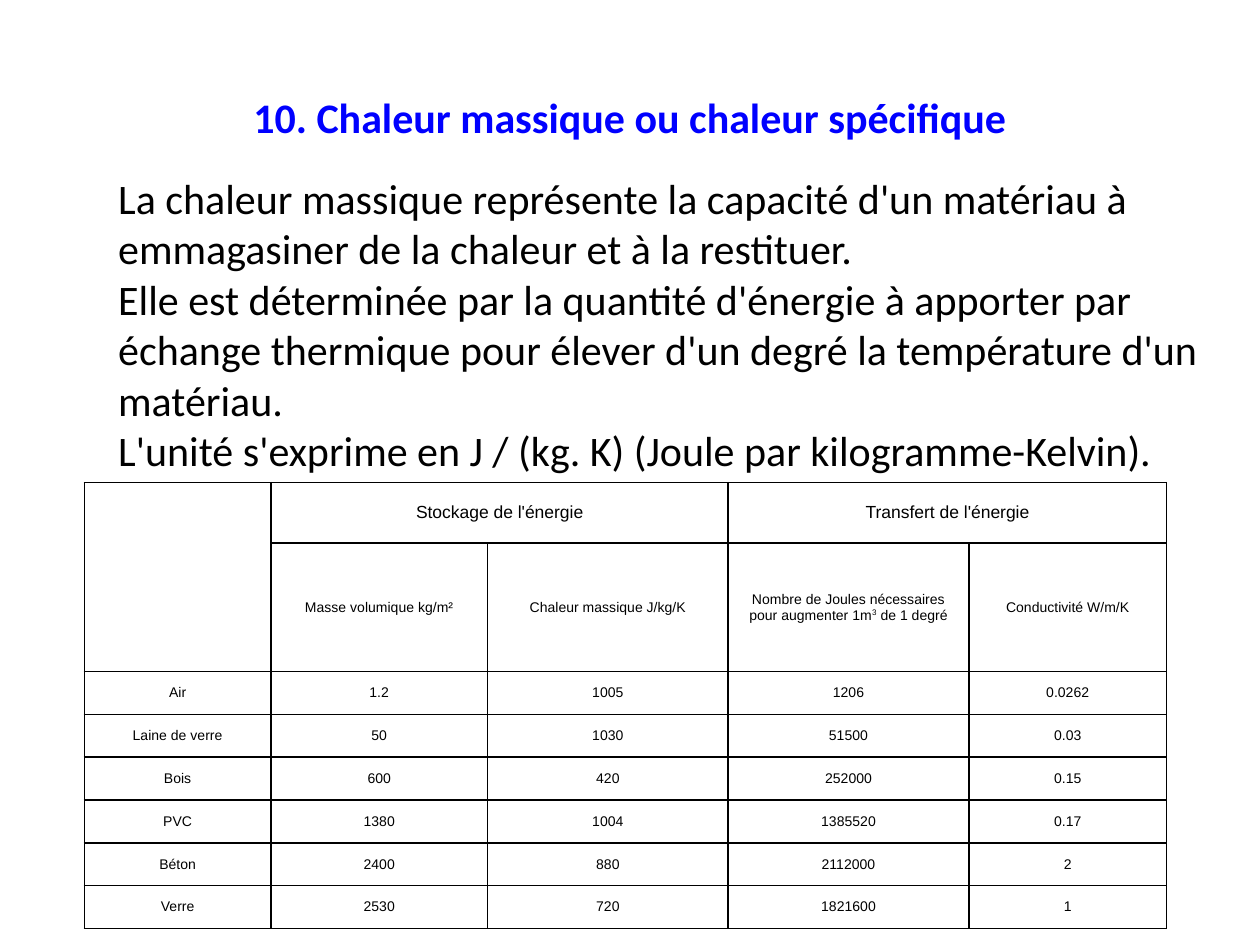
import pptx
import pptx.util
import pptx.dml.color
import pptx.enum.text
import pptx.oxml
import pptx.oxml.ns

Inches = pptx.util.Inches
Pt = pptx.util.Pt
BLACK = pptx.dml.color.RGBColor(0, 0, 0)
BLUE = pptx.dml.color.RGBColor(0, 0, 255)
CENTER = pptx.enum.text.PP_ALIGN.CENTER
LEFT = pptx.enum.text.PP_ALIGN.LEFT
MIDDLE = pptx.enum.text.MSO_ANCHOR.MIDDLE
TOP = pptx.enum.text.MSO_ANCHOR.TOP


def write(para, text, align, form):
    """Add text to a paragraph; every second part between ^ marks is raised."""
    para.alignment = align
    for i, part in enumerate(text.split("^")):
        run = para.add_run()
        run.text = part
        for key, val in form.items():
            setattr(run.font, key, val)
        run.font.color.rgb = BLUE if form.get("bold") else BLACK
        if i % 2:
            run.font._element.set("baseline", "30000")


def border(cell):
    """Draw a thin black line on all four sides of a cell."""
    props = cell._tc.get_or_add_tcPr()
    for i, side in enumerate("LRTB"):
        line = pptx.oxml.parse_xml(
            f'<a:ln{side} {pptx.oxml.ns.nsdecls("a")} w="12700"><a:solidFill>'
            f'<a:srgbClr val="{BLACK}"/></a:solidFill></a:ln{side}>')
        props.insert(i, line)


deck = pptx.Presentation()
deck.slide_width = Inches(10)
deck.slide_height = Inches(7.5)
slide = deck.slides.add_slide(deck.slide_layouts[6])

# Title and body text
title = ["10. Chaleur massique ou chaleur spécifique"]
body = [
    "La chaleur massique représente la capacité d'un matériau à "
    "emmagasiner de la chaleur et à la restituer.",
    "Elle est déterminée par la quantité d'énergie à apporter par "
    "échange thermique pour élever d'un degré la température d'un matériau.",
    "L'unité s'exprime en J / (kg. K) (Joule par kilogramme-Kelvin).",
]
large = {"name": "Calibri", "size": Pt(24)}
boxes = [
    (title, (0.5, 0.3, 9, 1.25), MIDDLE, CENTER, {**large, "bold": True}),
    (body, (0.84, 1.32, 9, 5.51), TOP, LEFT, large),
]
for lines, place, anchor, align, form in boxes:
    box = slide.shapes.add_textbox(*[Inches(n) for n in place])
    frame = box.text_frame
    frame.word_wrap = True
    frame.vertical_anchor = anchor
    for i, line in enumerate(lines):
        para = frame.add_paragraph() if i else frame.paragraphs[0]
        write(para, line, align, form)

# Table of materials
rows = [
    ["", "Stockage de l'énergie", "", "Transfert de l'énergie", ""],
    ["", "Masse volumique kg/m²", "Chaleur massique J/kg/K",
     "Nombre de Joules nécessaires pour augmenter 1m^3^ de 1 degré",
     "Conductivité W/m/K"],
    ["Air", "1.2", "1005", "1206", "0.0262"],
    ["Laine de verre", "50", "1030", "51500", "0.03"],
    ["Bois", "600", "420", "252000", "0.15"],
    ["PVC", "1380", "1004", "1385520", "0.17"],
    ["Béton", "2400", "880", "2112000", "2"],
    ["Verre", "2530", "720", "1821600", "1"],
]
widths = [1.48, 1.72, 1.91, 1.91, 1.57]
heights = [0.48, 1.02] + [0.34] * 6
table = slide.shapes.add_table(
    len(rows), len(widths), Inches(0.67), Inches(3.83),
    Inches(sum(widths)), Inches(sum(heights))).table
table.first_row = False
table.horz_banding = False
for col, width in zip(table.columns, widths):
    col.width = Inches(width)
for row, height in zip(table.rows, heights):
    row.height = Inches(height)

inset = {"margin_left": Inches(0.07), "margin_right": Inches(0.07),
         "margin_top": 0, "margin_bottom": 0, "vertical_anchor": MIDDLE}
for r, row in enumerate(rows):
    form = {"name": "Arial", "size": Pt(8 if r else 10)}
    for c, text in enumerate(row):
        cell = table.cell(r, c)
        for key, val in inset.items():
            setattr(cell, key, val)
        cell.fill.background()
        border(cell)
        if text:
            write(cell.text_frame.paragraphs[0], text, CENTER, form)

for first, last in [((0, 0), (1, 0)), ((0, 1), (0, 2)), ((0, 3), (0, 4))]:
    table.cell(*first).merge(table.cell(*last))

deck.save("out.pptx")
